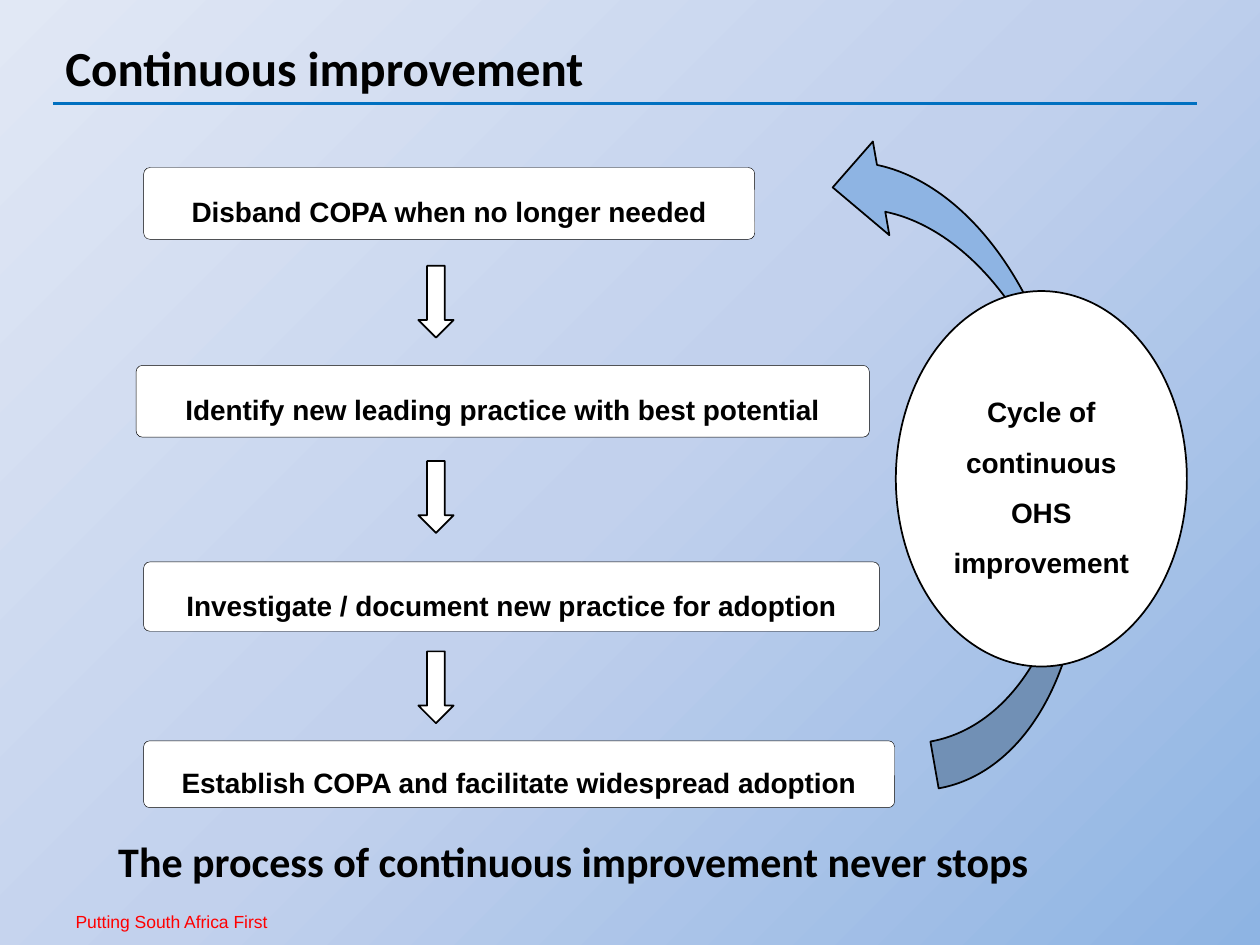
from lxml.etree import SubElement
from pptx import Presentation
from pptx.dml.color import RGBColor
from pptx.enum.shapes import MSO_CONNECTOR, MSO_SHAPE as Shape
from pptx.enum.text import MSO_ANCHOR, MSO_AUTO_SIZE, PP_ALIGN
from pptx.oxml import parse_xml
from pptx.oxml.ns import nsdecls, qn
from pptx.util import Inches, Pt

COLORS = {
    "sky": "8EB4E3",
    "mist": "C2D1ED",
    "pale": "E1E8F5",
    "white": "FFFFFF",
    "black": "000000",
    "rule": "0070C0",
    "red": "FF0000",
}
INSET = 0.04

# left, top, width, height, wording
STEPS = [
    (1.14, 1.33, 4.85, 0.57, "Disband COPA when no longer needed"),
    (1.08, 2.9, 5.82, 0.57, "Identify new leading practice with best potential"),
    (1.14, 4.46, 5.84, 0.55, "Investigate / document new practice for adoption"),
    (1.14, 5.88, 5.96, 0.53, "Establish COPA and facilitate widespread adoption"),
]
ARROW_TOPS = [2.11, 3.66, 5.17]


def color(name):
    return RGBColor.from_string(COLORS[name])


def paint_background(page):
    """Radial gradient centred on the bottom right corner."""
    page.background.fill.solid()
    stops = "".join(
        f'<a:gs pos="{place * 1000}"><a:srgbClr val="{COLORS[name]}"/></a:gs>'
        for place, name in ((0, "sky"), (50, "mist"), (100, "pale"))
    )
    gradient = parse_xml(
        f'<a:gradFill {nsdecls("a")} rotWithShape="1"><a:gsLst>{stops}</a:gsLst>'
        '<a:path path="circle"><a:fillToRect l="100000" t="100000"/></a:path>'
        '<a:tileRect r="-100000" b="-100000"/></a:gradFill>'
    )
    solid = next(page._element.iter(qn("a:solidFill")))
    solid.getparent().replace(solid, gradient)


def set_insets(frame):
    frame.margin_left = frame.margin_right = Inches(INSET)
    frame.margin_top = frame.margin_bottom = Inches(INSET)


def add_span(para, text, size, font, name="black", bold=True):
    span = para.add_run()
    span.text = text
    span.font.size = Pt(size)
    span.font.name = font
    span.font.bold = bold
    span.font.color.rgb = color(name)


def add_text(page, left, top, width, height):
    box = page.shapes.add_textbox(
        Inches(left), Inches(top), Inches(width), Inches(height))
    frame = box.text_frame
    frame.word_wrap = True
    frame.auto_size = MSO_AUTO_SIZE.SHAPE_TO_FIT_TEXT
    return frame


def add_rule(page, left, right, top):
    rule = page.shapes.add_connector(
        MSO_CONNECTOR.STRAIGHT, Inches(left), Inches(top), Inches(right), Inches(top))
    rule.line.color.rgb = color("rule")
    rule.line.width = Pt(2)
    SubElement(rule._element.spPr, qn("a:effectLst"))


def add_figure(page, kind, left, top, width, height, fill="white", weight=1):
    figure = page.shapes.add_shape(
        kind, Inches(left), Inches(top), Inches(width), Inches(height))
    figure.shadow.inherit = False
    figure.fill.solid()
    figure.fill.fore_color.rgb = color(fill)
    figure.line.color.rgb = color("black")
    figure.line.width = Pt(weight)
    return figure


def add_label(figure, text):
    frame = figure.text_frame
    frame.word_wrap = True
    frame.vertical_anchor = MSO_ANCHOR.MIDDLE
    set_insets(frame)
    para = frame.paragraphs[0]
    para.alignment = PP_ALIGN.CENTER
    para.line_spacing = 1.5
    add_span(para, text, 16, "Arial")


def main():
    deck = Presentation()
    deck.slide_width, deck.slide_height = Inches(10), Inches(7.5)
    page = deck.slides.add_slide(deck.slide_layouts[6])
    paint_background(page)

    # Footer motto
    motto = add_text(page, 0.56, 7.19, 1.69, 0.25)
    motto.word_wrap = False
    set_insets(motto)
    add_span(motto.paragraphs[0], "Putting South Africa First", 10, "Arial", "red", False)

    # Title and rule
    title = add_text(page, 0.42, 0.25, 9.08, 0.57)
    add_span(title.paragraphs[0], "Continuous improvement", 28, "Calibri")
    add_rule(page, 0.42, 9.5, 0.82)

    # Steps and the arrows between them
    for left, top, width, height, text in STEPS:
        step = add_figure(page, Shape.ROUNDED_RECTANGLE,
                          left, top, width, height, weight=0.25)
        step.adjustments[0] = 0.09
        add_label(step, text)
    for top in ARROW_TOPS:
        add_figure(page, Shape.DOWN_ARROW, 3.32, top, 0.28, 0.57)

    # Cycle back to the first step
    sweep = add_figure(page, Shape.CURVED_UP_ARROW, 5.13, 2.8, 5.22, 1.51, "sky")
    sweep.rotation = 260
    cycle = add_figure(page, Shape.FLOWCHART_CONNECTOR, 7.11, 2.31, 2.31, 2.98)
    add_label(cycle, "Cycle of continuous OHS improvement")

    # Closing statement
    closing = add_text(page, 0.84, 6.58, 8.67, 0.5)
    add_span(closing.paragraphs[0],
             "The process of continuous improvement never stops", 24, "Calibri")

    deck.save("out.pptx")


if __name__ == "__main__":
    main()
